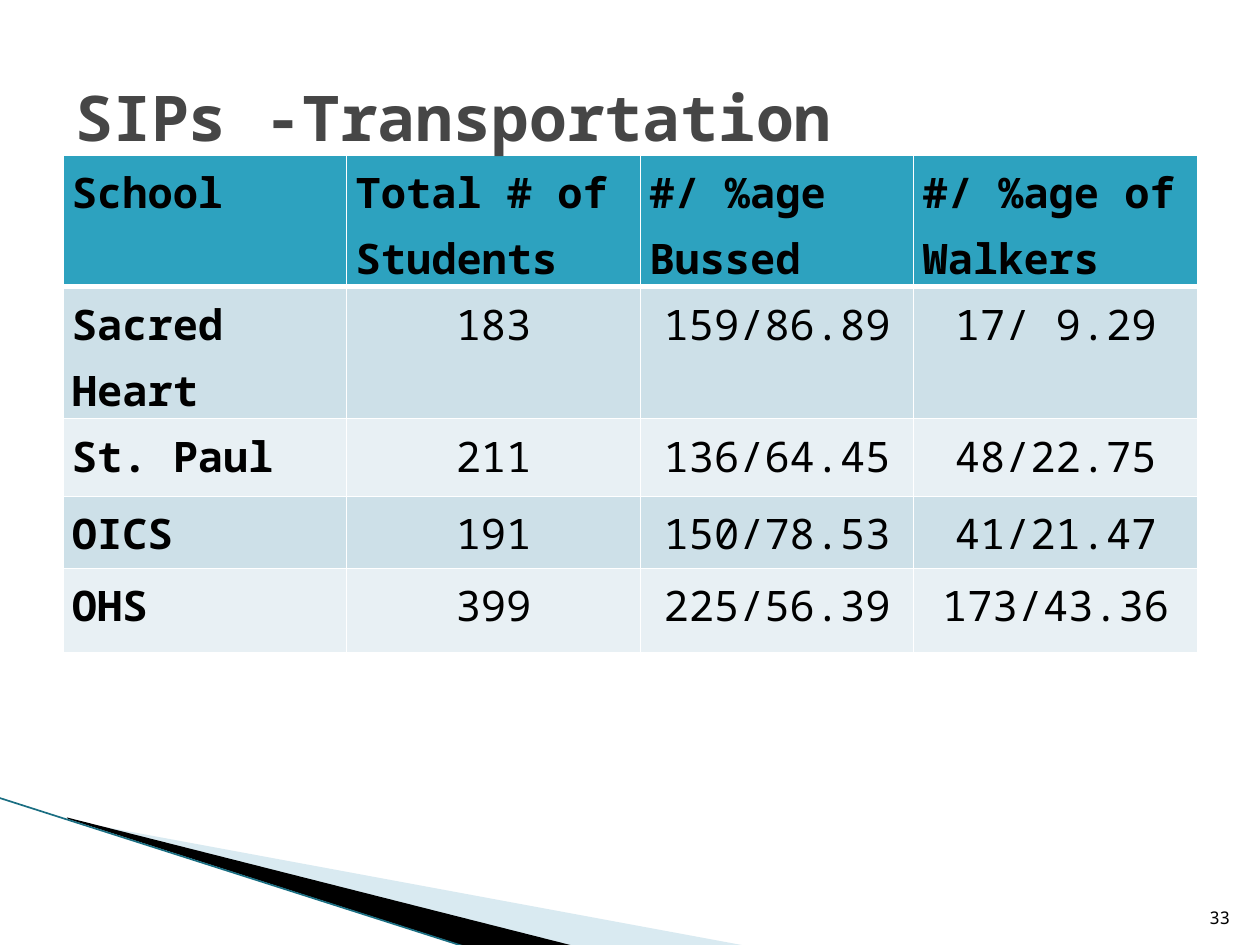
import pptx
import pptx.dml.color
import pptx.enum.shapes
import pptx.enum.text
import pptx.oxml.ns
import pptx.oxml.xmlchemy
import pptx.util
from pptx.util import Cm

FONT = "Noto Sans Mono"
ALIGN = pptx.enum.text.PP_ALIGN
ANCHOR = pptx.enum.text.MSO_ANCHOR

HEADER_FILL = "2DA2BF"
BAND_FILLS = ["CDE0E8", "E8F0F4"]
COLUMN_WIDTHS = [5.72, 5.92, 5.51, 5.72]
ROW_HEIGHTS = [1.19, 1.5, 1.57, 1.45, 1.7]
ROWS = [
    ["School", "Total # of Students", "#/ %age Bussed", "#/ %age of Walkers"],
    ["Sacred Heart", "183", "159/86.89", "17/ 9.29"],
    ["St. Paul", "211", "136/64.45", "48/22.75"],
    ["OICS", "191", "150/78.53", "41/21.47"],
    ["OHS", "399", "225/56.39", "173/43.36"],
]


def color(value):
    return pptx.dml.color.RGBColor.from_string(value)


def new_element(tag, **attributes):
    element = pptx.oxml.xmlchemy.OxmlElement(tag)
    for name, value in attributes.items():
        element.set(name, str(value))
    return element


def write(text_frame, text, size, text_color="000000", bold=False, align=ALIGN.LEFT):
    paragraph = text_frame.paragraphs[0]
    paragraph.alignment = align
    run = paragraph.add_run()
    run.text = text
    run.font.name = FONT
    run.font.size = pptx.util.Pt(size)
    run.font.bold = bold
    run.font.color.rgb = color(text_color)
    return paragraph


def add_polygon(slide, points, fill, opacity=100):
    """Draw a closed outline through points given in centimetres."""
    corners = [(Cm(x), Cm(y)) for x, y in points]
    builder = slide.shapes.build_freeform(*corners[0])
    builder.add_line_segments(corners[1:], close=True)
    shape = builder.convert_to_shape()
    shape.shadow.inherit = False
    shape.line.fill.background()
    shape.fill.solid()
    shape.fill.fore_color.rgb = color(fill)
    if opacity < 100:
        properties = shape._element.spPr
        color_element = properties.find(".//" + pptx.oxml.ns.qn("a:srgbClr"))
        color_element.append(new_element("a:alpha", val=opacity * 1000))


def add_line(slide, start, end, line_color, width):
    line = slide.shapes.add_connector(
        pptx.enum.shapes.MSO_CONNECTOR.STRAIGHT, *map(Cm, start + end))
    line.line.color.rgb = color(line_color)
    line.line.width = pptx.util.Pt(width)
    line._element.spPr.append(new_element("a:effectLst"))


def set_border(cell, side, width):
    border = new_element("a:ln" + side, w=int(pptx.util.Pt(width)))
    fill = new_element("a:solidFill")
    fill.append(new_element("a:srgbClr", val="FFFFFF"))
    border.append(fill)
    cell._tc.get_or_add_tcPr().append(border)


def format_cell(cell, text, row, column):
    is_header = row == 0
    is_label = is_header or column == 0
    cell.margin_left = cell.margin_right = Cm(0.18)
    cell.margin_top = cell.margin_bottom = 0
    paragraph = write(cell.text_frame, text, 24, bold=is_label,
                      align=ALIGN.LEFT if is_label else ALIGN.CENTER)
    paragraph.line_spacing = 1.15
    widths = {"L": 1, "R": 1, "T": 3 if row == 1 else 1, "B": 3 if is_header else 1}
    for side, width in widths.items():
        set_border(cell, side, width)
    cell.fill.solid()
    cell.fill.fore_color.rgb = color(HEADER_FILL if is_header else BAND_FILLS[(row - 1) % 2])


def add_transport_table(slide):
    frame = slide.shapes.add_table(
        len(ROWS), len(COLUMN_WIDTHS), Cm(1.27), Cm(3.12),
        Cm(sum(COLUMN_WIDTHS)), Cm(sum(ROW_HEIGHTS)))
    table = frame.table
    for column, width in zip(table.columns, COLUMN_WIDTHS):
        column.width = Cm(width)
    for row, height in zip(table.rows, ROW_HEIGHTS):
        row.height = Cm(height)
    for row, texts in enumerate(ROWS):
        for column, text in enumerate(texts):
            format_cell(table.cell(row, column), text, row, column)


def add_slide_number(slide, number):
    box = slide.shapes.add_textbox(Cm(24.03), Cm(17.81), Cm(1.02), Cm(1.02))
    frame = box.text_frame
    frame.word_wrap = True
    frame.vertical_anchor = ANCHOR.BOTTOM
    write(frame, number, 10, align=ALIGN.RIGHT)


def set_title(slide, text):
    """Fill the title placeholder and bring it in front of the table."""
    title = slide.shapes.title
    title.left, title.top = Cm(1.27), Cm(0.76)
    title.width, title.height = Cm(22.86), Cm(3.18)
    title.text_frame.vertical_anchor = ANCHOR.MIDDLE
    write(title.text_frame, text, 36, "464646", bold=True)
    slide.shapes._spTree.append(title._element)


def main():
    presentation = pptx.Presentation()
    presentation.slide_width = Cm(25.4)
    presentation.slide_height = Cm(19.05)
    slide = presentation.slides.add_slide(presentation.slide_layouts[5])

    add_polygon(slide, [(1.4, 16.54), (15.11, 19.08), (11.58, 19.08), (1.4, 16.51)],
                "A0CBDC", opacity=40)
    add_polygon(slide, [(1.35, 16.48), (11.61, 19.08), (9.45, 19.1), (1.37, 16.51)],
                "000000")
    add_line(slide, (-0.03, 16.08), (9.42, 19.1), "1A6E82", 0.95)
    add_transport_table(slide)
    add_slide_number(slide, "33")
    set_title(slide, "SIPs -Transportation")

    presentation.save("out.pptx")


if __name__ == "__main__":
    main()
